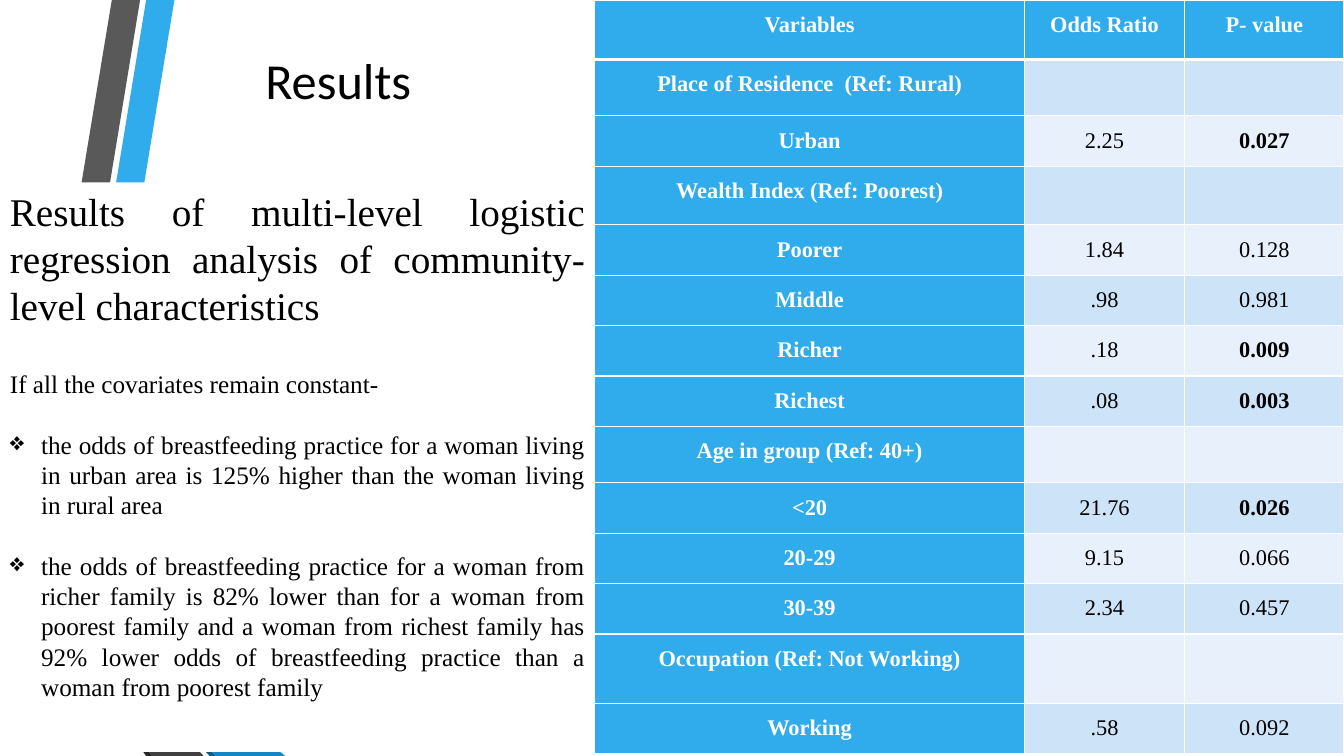
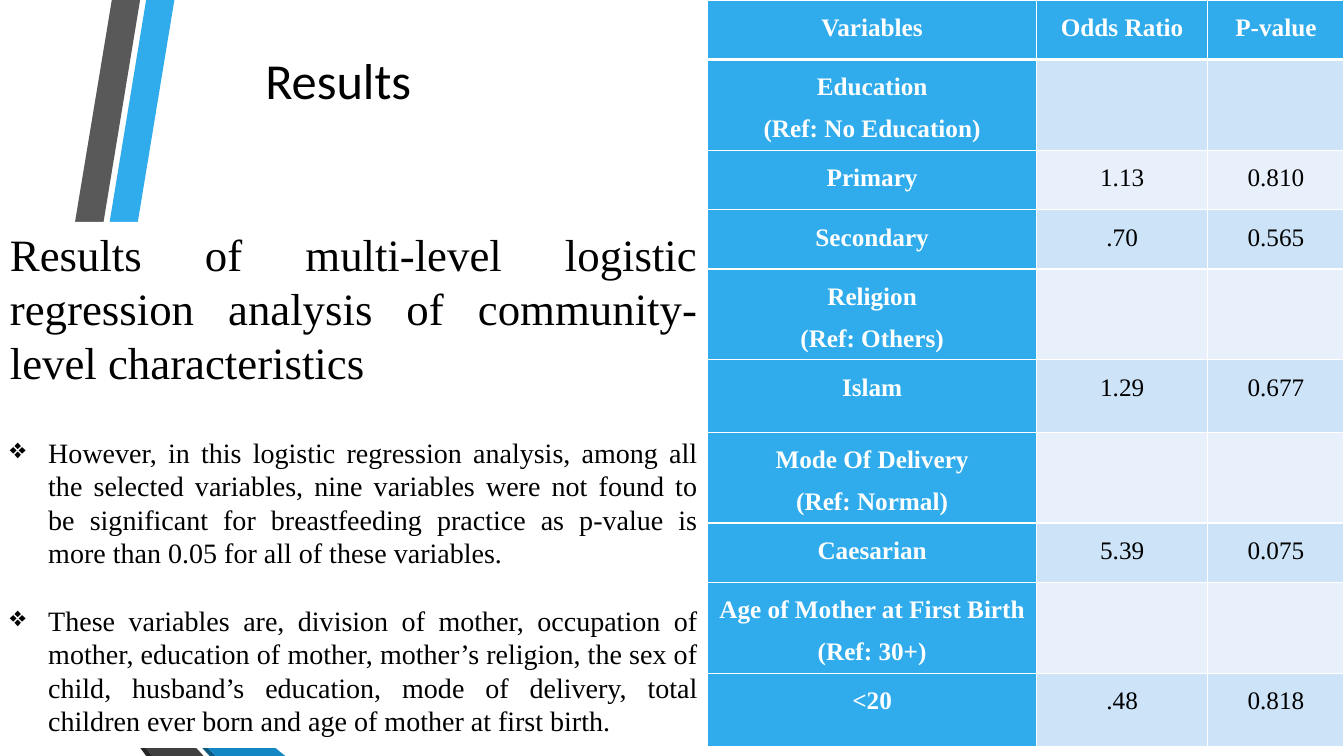
from dataclasses import dataclass

from lxml import etree
from pptx import Presentation
from pptx.dml.color import RGBColor
from pptx.enum.shapes import MSO_SHAPE
from pptx.enum.text import MSO_ANCHOR, PP_ALIGN
from pptx.oxml.ns import qn
from pptx.util import Pt

PX = 9144  # 100 px to the inch
RECTANGLE = MSO_SHAPE.RECTANGLE
TOP, MIDDLE = MSO_ANCHOR.TOP, MSO_ANCHOR.MIDDLE
CENTER, JUSTIFY = PP_ALIGN.CENTER, PP_ALIGN.JUSTIFY


@dataclass(frozen=True)
class Theme:
    accent: str = "30ACEC"
    accent_dark: str = "1287C3"
    accent_fold: str = "0C5A82"
    gray: str = "595959"
    gray_dark: str = "404040"
    gray_fold: str = "262626"
    row_odd: str = "CDE3F8"
    row_even: str = "E8F1FB"
    white: str = "FFFFFF"
    black: str = "000000"
    title_font: str = "Calibri"
    body_font: str = "Times New Roman"
    title_size: int = 36
    line_height: float = 1.2


THEME = Theme()

BANDS = [
    (THEME.accent, [(50, 578), (77, 583), (173, 0), (145, 0)]),
    (THEME.gray, [(139, 0), (111, 0), (16, 573), (44, 577)]),
    (THEME.gray_fold, [(16, 573), (145, 750), (151, 750)]),
    (THEME.accent_fold, [(50, 579), (208, 750), (214, 750)]),
    (THEME.accent_dark, [(50, 579), (214, 750), (283, 750), (77, 583), (50, 578)]),
    (THEME.gray_dark, [(202, 750), (48, 583), (43, 577), (16, 573), (151, 750)]),
]

HEADING = ("Results of multi-level logistic regression analysis "
           "of community-level characteristics")

SLIDES = [
    {
        "body_box": (0, 181, 590, 565),
        "heading_size": 28, "heading_gap": 24, "body_size": 18, "indent": 31,
        "intro": ["If all the covariates remain constant-"],
        "bullets": [
            "the odds of breastfeeding practice for a woman living in urban area "
            "is 125% higher than the woman living in rural area",
            "the odds of breastfeeding practice for a woman from richer family is "
            "82% lower than for a woman from poorest family and a woman from "
            "richest family has 92% lower odds of breastfeeding practice than a "
            "woman from poorest family",
        ],
        "columns": [426, 159, 158], "table_size": 16, "cell_margin": 5,
        "rows": [
            (59, "Variables", "Odds Ratio", "P- value"),
            (56, "Place of Residence  (Ref: Rural)", "", ""),
            (50, "Urban", "2.25", "0.027"),
            (58, "Wealth Index (Ref: Poorest)", "", ""),
            (50, "Poorer", "1.84", "0.128"),
            (50, "Middle", ".98", "0.981"),
            (50, "Richer", ".18", "0.009"),
            (50, "Richest", ".08", "0.003"),
            (56, "Age in group (Ref: 40+)", "", ""),
            (50, "<20", "21.76", "0.026"),
            (50, "20-29", "9.15", "0.066"),
            (50, "30-39", "2.34", "0.457"),
            (69, "Occupation (Ref: Not Working)", "", ""),
            (50, "Working", ".58", "0.092"),
        ],
    },
    {
        "body_box": (0, 220, 702, 522),
        "heading_size": 32, "heading_gap": 28, "body_size": 20, "indent": 38,
        "intro": [],
        "bullets": [
            "However, in this logistic regression analysis, among all the selected "
            "variables, nine variables were not found to be significant for "
            "breastfeeding practice as p-value is more than 0.05 for all of these "
            "variables.",
            "These variables are, division of mother, occupation of mother, "
            "education of mother, mother’s religion, the sex of child, husband’s "
            "education, mode of delivery, total children ever born and age of "
            "mother at first birth.",
        ],
        "columns": [326, 170, 135], "table_size": 18, "cell_margin": 7,
        "rows": [
            (59, "Variables", "Odds Ratio", "P-value"),
            (90, "Education\n(Ref: No Education)", "", ""),
            (59, "Primary", "1.13", "0.810"),
            (59, "Secondary", ".70", "0.565"),
            (90, "Religion\n(Ref: Others)", "", ""),
            (72, "Islam", "1.29", "0.677"),
            (90, "Mode Of Delivery\n(Ref: Normal)", "", ""),
            (59, "Caesarian", "5.39", "0.075"),
            (90, "Age of Mother at First Birth\n(Ref: 30+)", "", ""),
            (73, "<20", ".48", "0.818"),
        ],
    },
]


def format_font(font, name, size, color, bold=False):
    values = {"name": name, "size": Pt(size), "bold": bold}
    for attribute, value in values.items():
        setattr(font, attribute, value)
    font.color.rgb = RGBColor.from_string(color)


def set_borders(cell, widths):
    """Give the cell white borders; widths are points for left, right, top, bottom."""
    properties = cell._tc.get_or_add_tcPr()
    for position, (side, width) in enumerate(zip("LRTB", widths)):
        line = etree.Element(qn(f"a:ln{side}"), w=str(Pt(width)))
        fill = etree.SubElement(line, qn("a:solidFill"))
        etree.SubElement(fill, qn("a:srgbClr"), val=THEME.white)
        properties.insert(position, line)


presentation = Presentation()
presentation.slide_width = 1333 * PX
presentation.slide_height = 750 * PX
layout = presentation.slide_layouts[5]
slides = [presentation.slides.add_slide(layout) for _ in SLIDES]

# The bands are built once and moved to the layout that both slides use.
for index, (color, points) in enumerate(BANDS):
    builder = slides[0].shapes.build_freeform(*points[0], scale=PX)
    builder.add_line_segments(points[1:], close=True)
    band = builder.convert_to_shape()
    band.fill.solid()
    band.fill.fore_color.rgb = RGBColor.from_string(color)
    band.line.fill.background()
    band.shadow.inherit = False
    band.element.nvSpPr.cNvPr.set("id", str(100 + index))
    layout.shapes.element.insert(2 + index, band.element)

for slide, content in zip(slides, SLIDES):
    title = slide.shapes.title
    title_box = {"left": 207, "top": 45, "width": 257, "height": 68}
    for attribute, value in title_box.items():
        setattr(title, attribute, value * PX)
    title.text_frame.text = "Results"
    title.text_frame.vertical_anchor = MIDDLE
    paragraph = title.text_frame.paragraphs[0]
    paragraph.alignment = CENTER
    format_font(paragraph.runs[0].font, THEME.title_font, THEME.title_size, THEME.black)

    body = slide.shapes.add_shape(
        RECTANGLE, *(length * PX for length in content["body_box"]))
    body.fill.solid()
    body.fill.fore_color.rgb = RGBColor.from_string(THEME.white)
    body.line.fill.background()
    body.shadow.inherit = False
    frame = body.text_frame
    frame.word_wrap = True
    frame.vertical_anchor = TOP
    frame.text = "\n".join([HEADING] + content["intro"] + content["bullets"])
    first_bullet = 1 + len(content["intro"])
    last = len(frame.paragraphs) - 1
    for index, paragraph in enumerate(frame.paragraphs):
        size = content["body_size"] if index else content["heading_size"]
        gap = content["body_size"] if index else content["heading_gap"]
        paragraph.alignment = JUSTIFY
        paragraph.line_spacing = Pt(size * THEME.line_height)
        if index < last:
            paragraph.space_after = Pt(gap * THEME.line_height)
        format_font(paragraph.runs[0].font, THEME.body_font, size, THEME.black)
        if index >= first_bullet:
            properties = paragraph._p.get_or_add_pPr()
            properties.set("marL", str(content["indent"] * PX))
            properties.set("indent", str(-content["indent"] * PX))
            etree.SubElement(properties, qn("a:buChar"), char="❖")

    rows, columns = content["rows"], content["columns"]
    body_width = content["body_box"][2]
    table = slide.shapes.add_table(
        len(rows), len(columns), body_width * PX, 0,
        sum(columns) * PX, sum(row[0] for row in rows) * PX).table
    table.horz_banding = False
    for column, width in zip(table.columns, columns):
        column.width = width * PX
    for row_index, (height, *texts) in enumerate(rows):
        table.rows[row_index].height = height * PX
        for column_index, text in enumerate(texts):
            cell = table.cell(row_index, column_index)
            is_label = row_index == 0 or column_index == 0
            band_color = THEME.row_odd if row_index % 2 else THEME.row_even
            cell.fill.solid()
            cell.fill.fore_color.rgb = RGBColor.from_string(
                THEME.accent if is_label else band_color)
            set_borders(cell, (1, 1, 3 if row_index == 1 else 1,
                               3 if row_index == 0 else 1))
            if not text:
                continue
            margins = {"margin_left": content["cell_margin"] * PX,
                       "margin_right": content["cell_margin"] * PX,
                       "margin_top": 0, "margin_bottom": 0}
            for attribute, value in margins.items():
                setattr(cell, attribute, value)
            is_significant = column_index == 2 and not is_label and float(text) < 0.05
            cell.text_frame.text = text
            for paragraph in cell.text_frame.paragraphs:
                paragraph.alignment = CENTER
                paragraph.line_spacing = 1.5
                format_font(paragraph.runs[0].font, THEME.body_font,
                            content["table_size"],
                            THEME.white if is_label else THEME.black,
                            bold=is_label or is_significant)

presentation.save("out.pptx")
